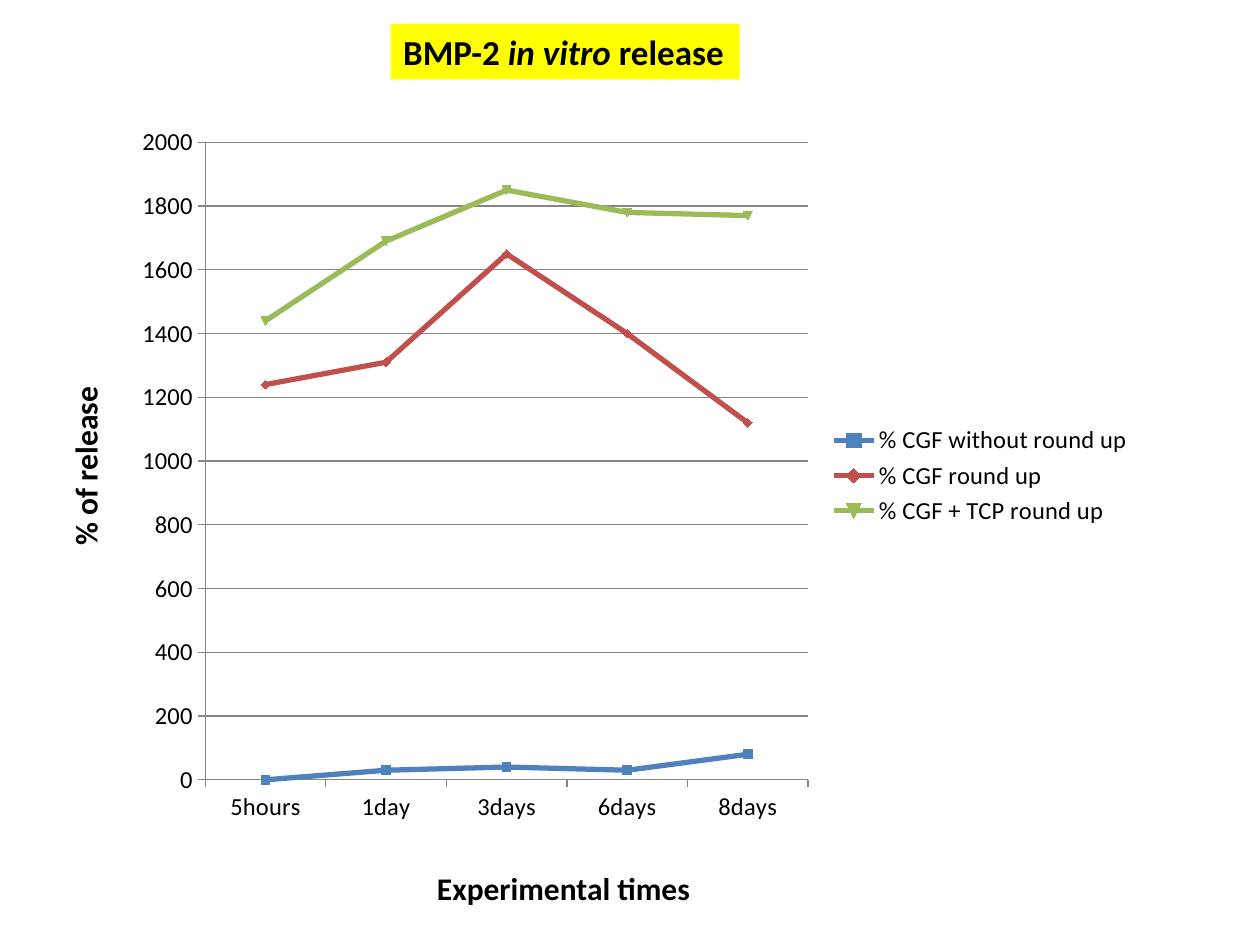
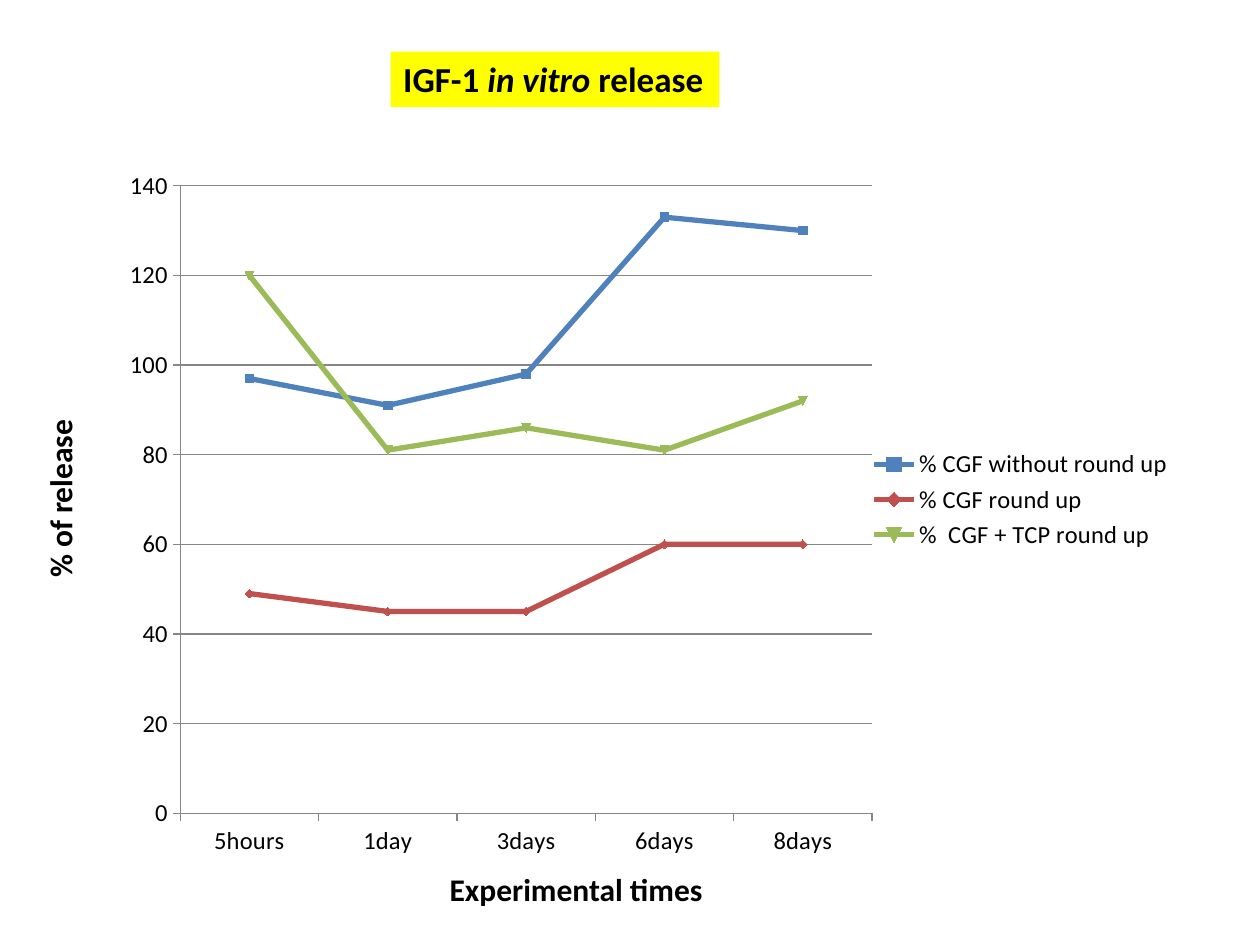
"""Build two slides of line charts on in vitro growth factor release."""
from lxml.etree import SubElement
from pptx import Presentation
from pptx.chart.data import CategoryChartData
from pptx.dml.color import RGBColor
from pptx.enum.chart import XL_CHART_TYPE, XL_LEGEND_POSITION, XL_TICK_MARK
from pptx.enum.text import MSO_ANCHOR, MSO_AUTO_SIZE, PP_ALIGN
from pptx.oxml.ns import qn
from pptx.util import Inches, Pt

FONT = "Calibri"
COLORS = {"text": "000000", "band": "FFFF00", "axis": "868686"}
SERIES_COLORS = ["4F81BD", "C0504D", "9BBB59"]
TIMES = ["5hours", "1day", "3days", "6days", "8days"]
TITLE_LEFT, TITLE_HEIGHT = 3.1, 0.44
LABEL_HEIGHT = 0.4

RELEASES = [
    {
        "factor": "BMP-2",
        "title_top": 0.19, "title_width": 2.77,
        "value_label": (-0.06, 3.49), "time_label": (3.37, 6.85),
        "chart": (0.98, 0.9, 8.11, 5.75),
        "plot": (0.08, 0.04, 0.59, 0.88),
        "scale": (2000, 200),
        "series": [
            ("% CGF without round up", [0, 30, 40, 30, 80]),
            ("% CGF round up", [1240, 1310, 1650, 1400, 1120]),
            ("% CGF + TCP round up", [1440, 1690, 1850, 1780, 1770]),
        ],
    },
    {
        "factor": "IGF-1",
        "title_top": 0.41, "title_width": 2.61,
        "value_label": (-0.26, 3.75), "time_label": (3.47, 6.86),
        "chart": (0.83, 1.07, 8.58, 5.79),
        "plot": (0.07, 0.07, 0.64, 0.86),
        "scale": (140, 20),
        "series": [
            ("% CGF without round up", [97, 91, 98, 133, 130]),
            ("% CGF round up", [49, 45, 45, 60, 60]),
            ("%  CGF + TCP round up", [120, 81, 86, 81, 92]),
        ],
    },
]


def color(value):
    return RGBColor.from_string(value)


def write(shape, runs, size):
    frame = shape.text_frame
    frame.word_wrap = False
    frame.auto_size = MSO_AUTO_SIZE.NONE
    frame.vertical_anchor = MSO_ANCHOR.TOP
    paragraph = frame.paragraphs[0]
    paragraph.alignment = PP_ALIGN.LEFT
    for text, italic in runs:
        run = paragraph.add_run()
        run.text = text
        run.font.name = FONT
        run.font.size = Pt(size)
        run.font.bold = True
        run.font.italic = italic
        run.font.color.rgb = color(COLORS["text"])


def add_title(slide, release):
    title = slide.shapes.title
    title.left, title.top = Inches(TITLE_LEFT), Inches(release["title_top"])
    title.width, title.height = Inches(release["title_width"]), Inches(TITLE_HEIGHT)
    title.fill.solid()
    title.fill.fore_color.rgb = color(COLORS["band"])
    runs = [(release["factor"] + " ", False), ("in vitro ", True), ("release", False)]
    write(title, runs, 20)


def add_label(slide, text, position, width, rotation=0):
    box = slide.shapes.add_textbox(*map(Inches, (*position, width, LABEL_HEIGHT)))
    box.rotation = rotation
    write(box, [(text, False)], 18)


def place_plot(chart, shares):
    plot_area = chart.element.find(".//" + qn("c:plotArea"))
    for old in plot_area.findall(qn("c:layout")):
        plot_area.remove(old)
    layout = SubElement(plot_area, qn("c:layout"))
    plot_area.insert(0, layout)
    manual = SubElement(layout, qn("c:manualLayout"))
    settings = [("layoutTarget", "inner"), ("xMode", "edge"), ("yMode", "edge")]
    settings += zip("xywh", shares)
    for tag, value in settings:
        SubElement(manual, qn("c:" + tag)).set("val", str(value))


def style_axis(axis):
    axis.major_tick_mark = XL_TICK_MARK.OUTSIDE
    axis.minor_tick_mark = XL_TICK_MARK.NONE
    axis.tick_labels.font.size = Pt(14)
    axis.format.line.color.rgb = color(COLORS["axis"])
    axis.format.line.width = Pt(0.75)


def add_chart(slide, release):
    data = CategoryChartData()
    data.categories = TIMES
    for name, values in release["series"]:
        data.add_series(name, values)
    chart = slide.shapes.add_chart(
        XL_CHART_TYPE.LINE_MARKERS, *map(Inches, release["chart"]), data
    ).chart
    chart.has_title = False
    chart.font.name = FONT
    chart.font.size = Pt(10)
    chart.font.color.rgb = color(COLORS["text"])
    chart.has_legend = True
    chart.legend.position = XL_LEGEND_POSITION.RIGHT
    chart.legend.include_in_layout = False
    chart.legend.font.size = Pt(14)

    style_axis(chart.category_axis)
    value_axis = chart.value_axis
    style_axis(value_axis)
    value_axis.minimum_scale = 0
    value_axis.maximum_scale, value_axis.major_unit = release["scale"]
    value_axis.has_major_gridlines = True
    gridline = value_axis.major_gridlines.format.line
    gridline.color.rgb = color(COLORS["axis"])
    gridline.width = Pt(0.75)

    chart.plots[0].vary_by_categories = False
    for series, series_color in zip(chart.plots[0].series, SERIES_COLORS):
        series.smooth = False
        series.format.line.color.rgb = color(series_color)
        series.format.line.width = Pt(3)
        series.marker.size = 5
        series.marker.format.fill.solid()
        series.marker.format.fill.fore_color.rgb = color(series_color)
        series.marker.format.line.color.rgb = color(series_color)
    place_plot(chart, release["plot"])


def main():
    presentation = Presentation()
    presentation.slide_width, presentation.slide_height = Inches(10), Inches(7.5)
    for release in RELEASES:
        slide = presentation.slides.add_slide(presentation.slide_layouts[5])
        add_title(slide, release)
        add_chart(slide, release)
        add_label(slide, "% of release", release["value_label"], 1.47, 270)
        add_label(slide, "Experimental times", release["time_label"], 2.23)
    presentation.save("out.pptx")


if __name__ == "__main__":
    main()
